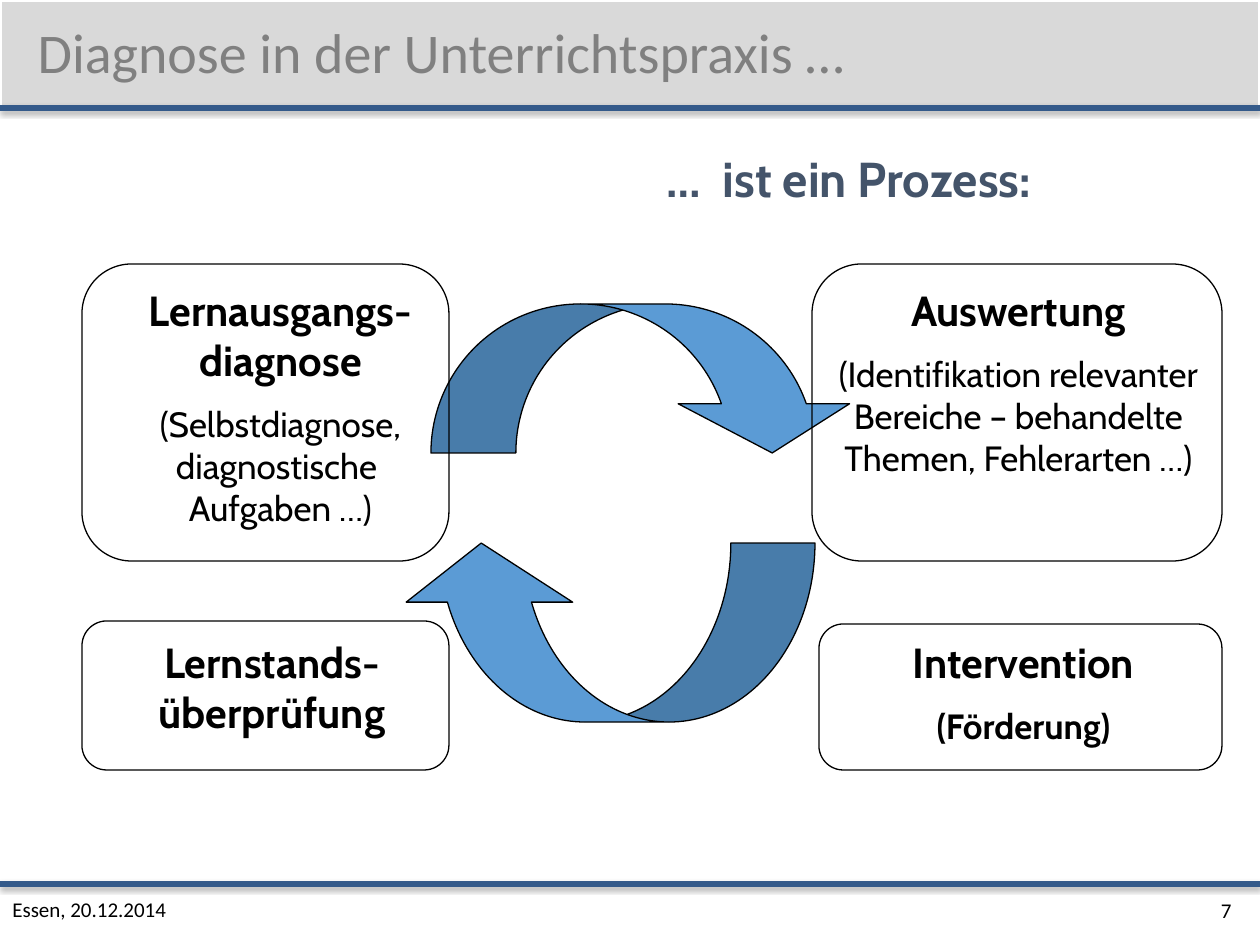
from dataclasses import dataclass

import pptx
import pptx.dml.color
import pptx.enum.shapes
import pptx.enum.text
import pptx.oxml
import pptx.oxml.ns
import pptx.util

SHAPE = pptx.enum.shapes.MSO_SHAPE
ALIGN = pptx.enum.text.PP_ALIGN
ANCHOR = pptx.enum.text.MSO_ANCHOR
PX_PER_INCH = 126


def px(*values):
    return [pptx.util.Emu(round(v * 914400 / PX_PER_INCH)) for v in values]


@dataclass(frozen=True)
class Theme:
    ink: str = "000000"
    white: str = "FFFFFF"
    band: str = "D9D9D9"
    rule: str = "345A8A"
    title: str = "808080"
    accent: str = "44546A"
    arrow: str = "5B9BD5"
    head_font: str = "Calibri"
    body_font: str = "Cabin"
    title_size: int = 32
    lead_size: int = 28
    heading_size: int = 24
    detail_size: int = 20
    footer_size: int = 12


class Deck:
    def __init__(self, theme):
        self.theme = theme
        self.prs = pptx.Presentation()
        self.prs.slide_width, self.prs.slide_height = px(1260, 945)
        self.s = self.prs.slides.add_slide(self.prs.slide_layouts[5])

    def color(self, value):
        return pptx.dml.color.RGBColor.from_string(value)

    def style(self, p, font, size, color, bold=False):
        for r in p.runs:
            r.font.name = font
            r.font.size = pptx.util.Pt(size)
            r.font.color.rgb = self.color(color)
            r.font.bold = bold

    def title(self, text, *box):
        sp = self.s.shapes.title
        sp.left, sp.top, sp.width, sp.height = px(*box)
        sp._element.getparent().append(sp._element)
        tf = sp.text_frame
        tf.text = text
        tf.auto_size = pptx.enum.text.MSO_AUTO_SIZE.NONE
        tf.vertical_anchor = ANCHOR.MIDDLE
        p = tf.paragraphs[0]
        p.alignment = ALIGN.LEFT
        p.line_spacing = 0.9
        self.style(p, self.theme.head_font, self.theme.title_size, self.theme.title)

    def text(self, box, lines, align=ALIGN.CENTER, anchor=ANCHOR.TOP, font=None, color=None):
        tf = self.s.shapes.add_textbox(*px(*box)).text_frame
        tf.word_wrap = True
        tf.vertical_anchor = anchor
        for i, (text, size, bold) in enumerate(lines):
            p = tf.add_paragraph() if i else tf.paragraphs[0]
            p.text = text
            p.alignment = align
            if i:
                p.space_before = pptx.util.Pt(size / 2)
            self.style(p, font or self.theme.body_font, size, color or self.theme.ink, bold)

    def shape(self, kind, box, fill=None, line=None, width=0.75, adj=(), rotation=0):
        sp = self.s.shapes.add_shape(kind, *px(*box))
        sp.shadow.inherit = False
        sp.rotation = rotation
        for i, value in enumerate(adj):
            sp.adjustments[i] = value
        if fill:
            sp.fill.solid()
            sp.fill.fore_color.rgb = self.color(fill)
        else:
            sp.fill.background()
        sp.line.color.rgb = self.color(line or self.theme.ink)
        sp.line.width = pptx.util.Pt(width)

    def rule(self, y):
        kind = pptx.enum.shapes.MSO_CONNECTOR.STRAIGHT
        line = self.s.shapes.add_connector(kind, *px(0, y, 1260, y))
        line.line.color.rgb = self.color(self.theme.rule)
        line.line.width = pptx.util.Pt(3)
        line._element.spPr.append(pptx.oxml.parse_xml(
            f'<a:effectLst {pptx.oxml.ns.nsdecls("a")}>'
            '<a:outerShdw blurRad="39370" dist="20320" dir="5400000" rotWithShape="0">'
            f'<a:srgbClr val="{self.theme.ink}"><a:alpha val="38000"/></a:srgbClr>'
            '</a:outerShdw></a:effectLst>'))


def main():
    theme = Theme()
    deck = Deck(theme)
    heading, detail = theme.heading_size, theme.detail_size

    deck.rule(884)
    deck.shape(SHAPE.RECTANGLE, (0, 0, 1260, 110), theme.band, theme.white, 2)
    deck.rule(108)
    for text, box, align in [
        ("7", (1168, 885, 76, 50), ALIGN.RIGHT),
        ("Essen, 20.12.2014", (0, 884, 1260, 50), ALIGN.LEFT),
    ]:
        deck.text(box, [(text, theme.footer_size, False)], align, ANCHOR.MIDDLE, theme.head_font)
    deck.title("Diagnose in der Unterrichtspraxis …", 25, -14, 1250, 139)

    for box, adj, rotation in [
        ((431, 304, 427, 149), (0.57, 1.15, 0.33), 0),
        ((398, 543, 417, 179), (0.47, 0.93, 0.33), 180),
    ]:
        deck.shape(SHAPE.CURVED_DOWN_ARROW, box, theme.arrow, adj=adj, rotation=rotation)

    deck.text((82, 278, 397, 263), [
        ("Lernausgangs-diagnose", heading, True),
        ("(Selbstdiagnose, diagnostische \vAufgaben …)", detail, False),
    ])
    deck.text((815, 278, 407, 252), [
        ("Auswertung", heading, True),
        ("(Identifikation relevanter Bereiche – behandelte Themen, Fehlerarten …)", detail, False),
    ])
    deck.text((825, 630, 397, 126), [
        ("Intervention", heading, True),
        ("(Förderung)", detail, True),
    ])
    deck.text((113, 630, 318, 113), [("Lernstands-überprüfung", heading, True)])
    deck.text((319, 142, 724, 72), [("…  ist ein Prozess:", theme.lead_size, True)],
              ALIGN.RIGHT, color=theme.accent)

    for box in [
        (82, 264, 367, 297),
        (82, 621, 367, 149),
        (812, 264, 410, 297),
        (819, 624, 403, 146),
    ]:
        deck.shape(SHAPE.ROUNDED_RECTANGLE, box)

    deck.prs.save("out.pptx")


if __name__ == "__main__":
    main()
